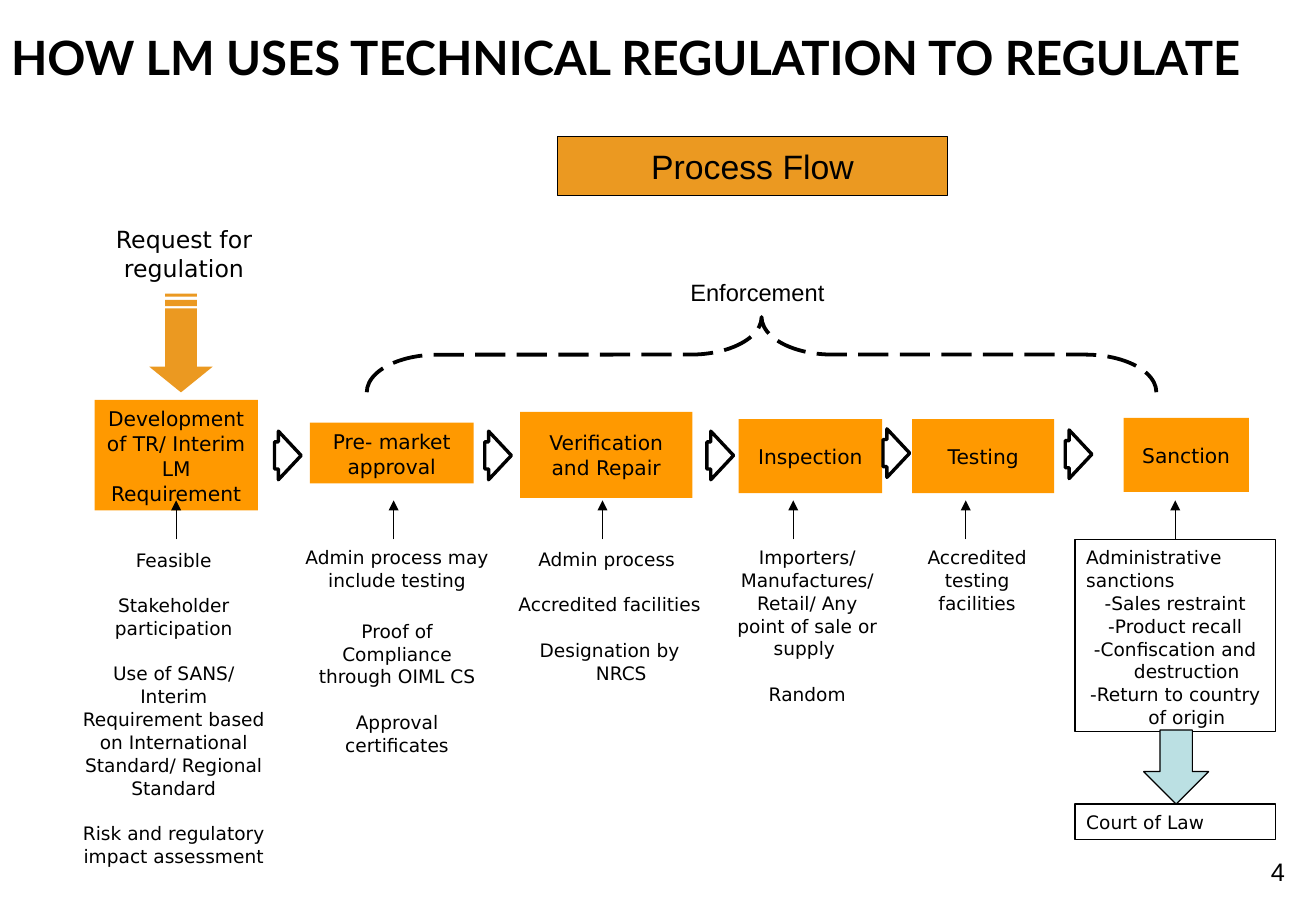
from dataclasses import dataclass
from typing import Any

from lxml import etree
from pptx import Presentation
from pptx.dml.color import RGBColor
from pptx.enum.dml import MSO_LINE
from pptx.enum.shapes import MSO_CONNECTOR, MSO_SHAPE
from pptx.enum.text import MSO_ANCHOR, PP_ALIGN
from pptx.oxml.ns import qn
from pptx.util import Pt

LEFT, CENTER, RIGHT = PP_ALIGN.LEFT, PP_ALIGN.CENTER, PP_ALIGN.RIGHT
TOP, MIDDLE = MSO_ANCHOR.TOP, MSO_ANCHOR.MIDDLE
RECTANGLE, LEFT_BRACE = MSO_SHAPE.RECTANGLE, MSO_SHAPE.LEFT_BRACE
RIGHT_ARROW, DOWN_ARROW = MSO_SHAPE.RIGHT_ARROW, MSO_SHAPE.DOWN_ARROW
STRAIGHT, LONG_DASH = MSO_CONNECTOR.STRAIGHT, MSO_LINE.LONG_DASH

COLORS = {"black": "000000", "step": "FF9900", "request": "EB9921", "court": "BBE0E3"}
BODY, ARIAL, HEADING = "DejaVu Sans", "Arial", "Lato"
HANGING = 13.7
ARROW_BOTTOM, ARROW_TOP = 319.7, 296.6


@dataclass
class Line:
    text: str
    align: Any = CENTER
    before: float = 0
    hanging: float = 0


@dataclass
class Box:
    left: float
    top: float
    width: float
    height: float
    lines: list[Line]
    size: float = 11
    font: str = BODY
    bold: bool = False
    anchor: Any = TOP
    wrap: bool = True
    fill: str | None = None
    line: str | None = None


@dataclass
class Step:
    box: Box
    arrow_x: float
    notes: Box


def step_box(left: float, top: float, width: float, height: float, text: str) -> Box:
    return Box(left, top, width, height, [Line(text)], 12, anchor=MIDDLE, fill="step")


def notes_box(left: float, top: float, width: float, lines: list[Line]) -> Box:
    return Box(left, top, width, 540 - top - 28, lines)


def apply(target: Any, values: dict[str, Any]) -> None:
    for name, value in values.items():
        setattr(target, name, value)


def color(name: str) -> RGBColor:
    return RGBColor.from_string(COLORS[name])


def paint(shape: Any, fill: str | None, line: str | None, weight: float = 0.75) -> None:
    shape.shadow.inherit = False
    if fill:
        shape.fill.solid()
        shape.fill.fore_color.rgb = color(fill)
    else:
        shape.fill.background()
    if line:
        shape.line.color.rgb = color(line)
        shape.line.width = Pt(weight)
    else:
        shape.line.fill.background()


def draw_preset(slide: Any, kind: Any, frame: tuple[float, ...], fill: str | None,
                line: str | None, weight: float = 0.75,
                adjustments: tuple[float, ...] = ()) -> Any:
    shape = slide.shapes.add_shape(kind, *map(Pt, frame))
    paint(shape, fill, line, weight)
    for index, value in enumerate(adjustments):
        shape.adjustments[index] = value
    return shape


def draw_box(slide: Any, box: Box) -> Any:
    frame = (box.left, box.top, box.width, box.height)
    if box.fill or box.line:
        shape = draw_preset(slide, RECTANGLE, frame, box.fill, box.line)
    else:
        shape = slide.shapes.add_textbox(*map(Pt, frame))
    apply(shape.text_frame, {
        "word_wrap": box.wrap, "vertical_anchor": box.anchor,
        "margin_left": Pt(6.6), "margin_right": Pt(6.6),
        "margin_top": Pt(3.5), "margin_bottom": Pt(3.5)})
    for index, line in enumerate(box.lines):
        paragraph = shape.text_frame.paragraphs[0] if index == 0 else shape.text_frame.add_paragraph()
        paragraph.text = line.text
        apply(paragraph, {"alignment": line.align, "space_before": Pt(line.before),
                          "line_spacing": 1.03 if box.font == BODY else 1.0})
        if line.hanging:
            properties = paragraph._p.get_or_add_pPr()
            properties.set("marL", str(Pt(line.hanging)))
            properties.set("indent", str(-Pt(line.hanging)))
        apply(paragraph.font, {"name": box.font, "size": Pt(box.size), "bold": box.bold})
        paragraph.font.color.rgb = color("black")
    return shape


def draw_up_arrow(slide: Any, x: float) -> Any:
    connector = slide.shapes.add_connector(
        STRAIGHT, Pt(x), Pt(ARROW_BOTTOM), Pt(x), Pt(ARROW_TOP))
    connector.line.color.rgb = color("black")
    connector.line.width = Pt(0.75)
    etree.SubElement(connector.line._get_or_add_ln(), qn("a:tailEnd"), type="triangle")
    etree.SubElement(connector._element.spPr, qn("a:effectLst"))
    return connector


def draw_striped_arrow(slide: Any) -> None:
    center, half_head, half_shaft = 107.3, 18.8, 9.4
    left, right = center - half_shaft, center + half_shaft
    arrow = [(center + half_head, 217.4), (right, 217.4), (right, 182.9), (left, 182.9),
             (left, 217.4), (center - half_head, 217.4), (center, 232.6)]
    stripes = [[(right, top), (left, top), (left, bottom), (right, bottom)]
               for top, bottom in ((177.8, 181.4), (174.0, 175.9))]
    builder = slide.shapes.build_freeform(*map(Pt, arrow[0]))
    for index, outline in enumerate([arrow, *stripes]):
        points = [(Pt(x), Pt(y)) for x, y in outline]
        if index:
            builder.move_to(*points[0])
        builder.add_line_segments(points[1:], close=True)
    paint(builder.convert_to_shape(), "request", None)


CAPTIONS = [
    Box(0, 0, 780, 67, [Line("HOW LM USES TECHNICAL REGULATION TO REGULATE", LEFT)],
        28, HEADING, True, MIDDLE),
    Box(39.6, 129.6, 139, 41, [Line("Request for regulation")], 14, anchor=MIDDLE),
    Box(330.5, 80.8, 231.1, 35.1, [Line("Process Flow")], 20, ARIAL, anchor=MIDDLE,
        wrap=False, fill="request", line="black"),
    Box(362.9, 162.9, 172.1, 20.2, [Line("Enforcement")], 14, ARIAL, anchor=MIDDLE, wrap=False),
    Box(605.5, 504, 162.7, 36, [Line("4", RIGHT)], 15, ARIAL),
]
STEPS = [
    Step(step_box(56, 237, 96.8, 65.5, "Development of TR/ Interim LM Requirement"), 104.4,
         notes_box(41.8, 321.6, 122.4, [
             Line("Feasible"), Line("Stakeholder participation", before=13.2),
             Line("Use of SANS/", before=13.2),
             Line("Interim Requirement based on International Standard/ Regional Standard"),
             Line("Risk and regulatory impact assessment", before=13.2)])),
    Step(step_box(183.6, 250.6, 97.2, 36, "Pre- market approval"), 233.3,
         notes_box(174.2, 319.7, 122.4, [
             Line("Admin process may include testing"),
             Line("Proof of Compliance through OIML CS", before=16.6),
             Line("Approval certificates", before=13.2)])),
    Step(step_box(308.2, 244.1, 102.2, 51.1, "Verification and Repair"), 357.1,
         notes_box(300.2, 321.1, 122.4, [
             Line("Admin process ", hanging=HANGING),
             Line("Accredited facilities", before=13.2, hanging=HANGING),
             Line("Designation by NRCS", before=13.2, hanging=HANGING)])),
    Step(step_box(437.8, 248.4, 85, 43.9, "Inspection"), 470.2,
         notes_box(427, 319.7, 103, [
             Line("Importers/ Manufactures/ Retail/ Any point of sale or supply "),
             Line("Random", before=13.2)])),
    Step(step_box(540.7, 248.4, 84.2, 43.9, "Testing"), 572.4,
         notes_box(533.5, 319.7, 91.4, [Line("Accredited testing facilities")])),
]
SANCTION = step_box(666, 247.7, 74.2, 43.9, "Sanction")
SANCTION_LIST = Box(637.2, ARROW_BOTTOM, 118.8, 113.8, [
    Line("Administrative sanctions", LEFT),
    *(Line(text, hanging=HANGING) for text in (
        "-Sales restraint", "-Product recall", "-Confiscation and destruction",
        "-Return to country of origin"))], line="black")
COURT = Box(637.2, 476.6, 118.8, 20.9, [Line("Court of Law", LEFT)], line="black")
FLOW_ARROWS = [(162.7, 255.6), (287.3, 255.6), (419, 255.6), (523.4, 254.2), (631.4, 254.9)]


def main() -> None:
    presentation = Presentation()
    presentation.slide_width, presentation.slide_height = Pt(780), Pt(540)
    slide = presentation.slides.add_slide(presentation.slide_layouts[6])

    # Title, captions and slide number
    for caption in CAPTIONS:
        draw_box(slide, caption)

    # Request arrow and enforcement brace
    draw_striped_arrow(slide)
    brace = draw_preset(slide, LEFT_BRACE, (429.1, -23.8, 44.6, 468), None, "black", 2.25, (0.945, 0.5))
    brace.rotation = 90
    brace.line.dash_style = LONG_DASH

    # Process steps with their notes
    for step in STEPS:
        draw_box(slide, step.box)
        draw_box(slide, step.notes)
        draw_up_arrow(slide, step.arrow_x)
    for left, top in FLOW_ARROWS:
        draw_preset(slide, RIGHT_ARROW, (left, top, 15.8, 28.8), None, "black", 2, (0.558, 0.853))

    # Sanction branch
    draw_box(slide, SANCTION)
    sanction_list = draw_box(slide, SANCTION_LIST)
    draw_up_arrow(slide, 696.6).begin_connect(sanction_list, 0)
    draw_box(slide, COURT)
    draw_preset(slide, DOWN_ARROW, (677.9, 432.7, 38.5, 43.9), "court", "black")

    presentation.save("out.pptx")


if __name__ == "__main__":
    main()
